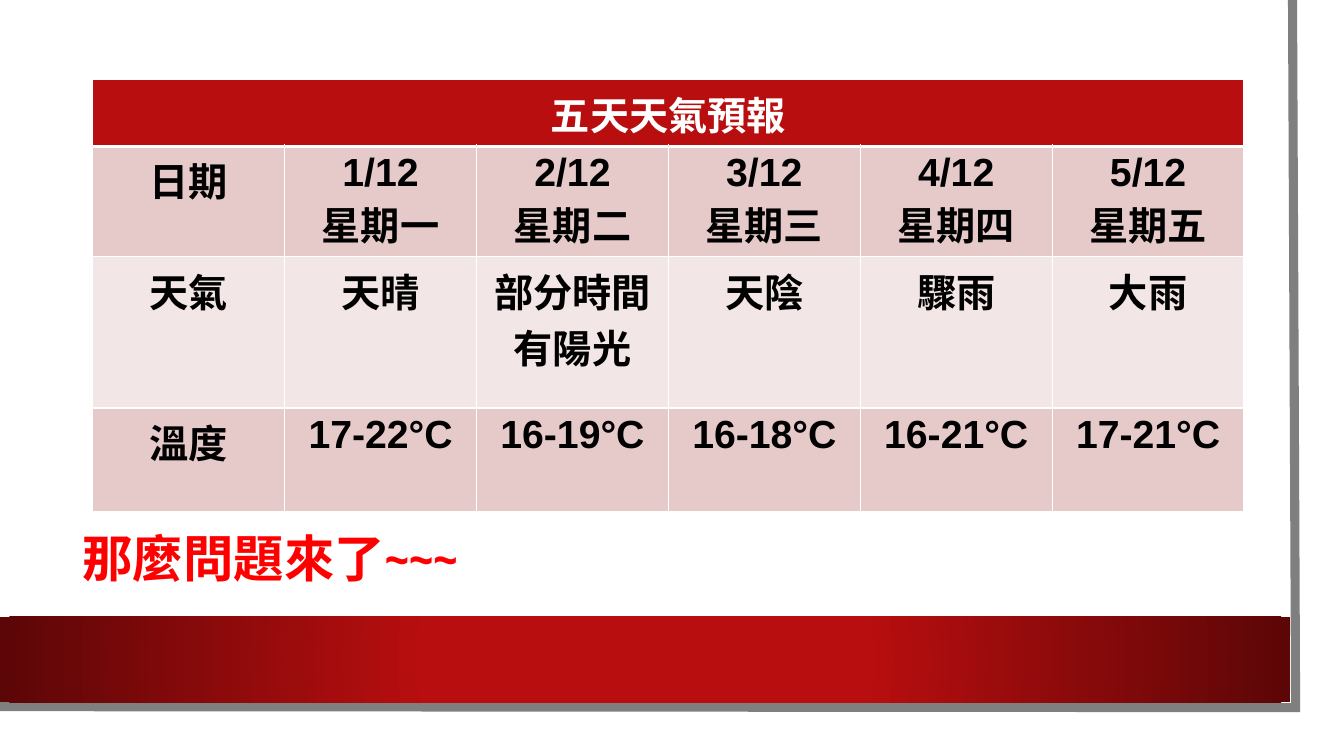
from dataclasses import dataclass

from lxml import etree
from pptx import Presentation
from pptx import util as u
from pptx.dml.color import RGBColor
from pptx.enum import shapes, text
from pptx.oxml import parse_xml
from pptx.oxml.ns import nsdecls, qn

WIDTH, HEIGHT = u.Inches(13.33), u.Inches(7.5)
RED, DARK_RED, GREY = "B80E0F", "5C0607", "7F7F7F"
WHITE, BLACK, BRIGHT_RED = "FFFFFF", "000000", "FF0000"


@dataclass
class ForecastRow:
    height: float  # percent of the slide's height
    fill: str
    colour: str
    bottom_border: float
    cells: list[str]


FORECAST = [
    ForecastRow(7.6, RED, WHITE, 3, ["五天天氣預報"]),
    ForecastRow(13.73, "E6CACA", BLACK, 1,
                ["日期", "1/12\n星期一", "2/12\n星期二", "3/12\n星期三", "4/12\n星期四", "5/12\n星期五"]),
    ForecastRow(20, "F3E6E6", BLACK, 1,
                ["天氣", "天晴", "部分時間有陽光", "天陰", "驟雨", "大雨"]),
    ForecastRow(13.73, "E6CACA", BLACK, 1,
                ["溫度", "17-22°C", "16-19°C", "16-18°C", "16-21°C", "17-21°C"]),
]
COLUMN_COUNT = 6


def across(percent: float) -> int:
    return round(WIDTH * percent / 100)


def down(percent: float) -> int:
    return round(HEIGHT * percent / 100)


def rgb(colour: str) -> RGBColor:
    return RGBColor.from_string(colour)


def format_text(text_frame, font_name: str, size: float, colour: str, alignment) -> None:
    for paragraph in text_frame.paragraphs:
        paragraph.alignment = alignment
        for run in paragraph.runs:
            run.font.name, run.font.size, run.font.bold = font_name, u.Pt(size), True
            run.font.color.rgb = rgb(colour)


def add_frame_edge(slide) -> None:
    builder = slide.shapes.build_freeform(across(96.17), 0)
    builder.add_line_segments([(across(96.4), down(93.6)), (across(-0.23), down(93.47))], close=False)
    edge = builder.convert_to_shape()
    edge.shadow.inherit = False
    edge.fill.background()
    edge.line.color.rgb = rgb(GREY)
    edge.line.width = u.Pt(6.5)
    etree.SubElement(edge.line._get_or_add_ln(), qn("a:miter"), lim="800000")


def add_gradient_band(slide) -> None:
    band = slide.shapes.add_shape(
        shapes.MSO_SHAPE.RECTANGLE, 0, down(81.6), across(96.02), down(11.33))
    band.shadow.inherit = False
    band.line.fill.background()
    stops = "".join(
        f'<a:gs pos="{share * 1000}"><a:srgbClr val="{colour}"/></a:gs>'
        for share, colour in [(0, RED), (34, RED), (100, DARK_RED)])
    gradient = parse_xml(
        f'<a:gradFill {nsdecls("a")} rotWithShape="1"><a:gsLst>{stops}</a:gsLst>'
        '<a:path path="circle"><a:fillToRect l="50000" t="50000" r="50000" b="50000"/></a:path>'
        '</a:gradFill>')
    band._element.spPr.find(qn("a:prstGeom")).addnext(gradient)


def add_borders(cell, bottom: float) -> None:
    properties = cell._tc.get_or_add_tcPr()
    for side, width in {"L": 1, "R": 1, "T": 1, "B": bottom}.items():
        properties.append(parse_xml(
            f'<a:ln{side} {nsdecls("a")} w="{u.Pt(width)}"><a:solidFill>'
            f'<a:srgbClr val="{WHITE}"/></a:solidFill></a:ln{side}>'))


def add_forecast_table(slide) -> None:
    table_width = across(85.67)
    table_height = down(sum(row.height for row in FORECAST))
    table = slide.shapes.add_table(
        len(FORECAST), COLUMN_COUNT, across(6.9), down(10.53), table_width, table_height).table
    for column in table.columns:
        column.width = table_width // COLUMN_COUNT
    for row_index, row in enumerate(FORECAST):
        table.rows[row_index].height = down(row.height)
        for column_index in range(COLUMN_COUNT):
            cell = table.cell(row_index, column_index)
            add_borders(cell, row.bottom_border)
            cell.fill.solid()
            cell.fill.fore_color.rgb = rgb(row.fill)
            if column_index < len(row.cells):
                cell.text_frame.text = row.cells[column_index]
                format_text(cell.text_frame, "Arial", 28, row.colour, text.PP_ALIGN.CENTER)
    table.cell(0, 0).merge(table.cell(0, COLUMN_COUNT - 1))


def add_question_lead(slide) -> None:
    box = slide.shapes.add_textbox(across(5.4), down(69.07), across(40.5), down(9.47))
    box.text_frame.word_wrap = True
    box.text_frame.text = "那麼問題來了~~~"
    format_text(box.text_frame, "Arial Narrow", 36, BRIGHT_RED, text.PP_ALIGN.LEFT)


def main() -> None:
    presentation = Presentation()
    presentation.slide_width, presentation.slide_height = WIDTH, HEIGHT
    slide = presentation.slides.add_slide(presentation.slide_layouts[6])

    # Page frame
    add_frame_edge(slide)
    add_gradient_band(slide)

    # Forecast and the line that leads to the questions
    add_forecast_table(slide)
    add_question_lead(slide)

    presentation.save("out.pptx")


if __name__ == "__main__":
    main()
